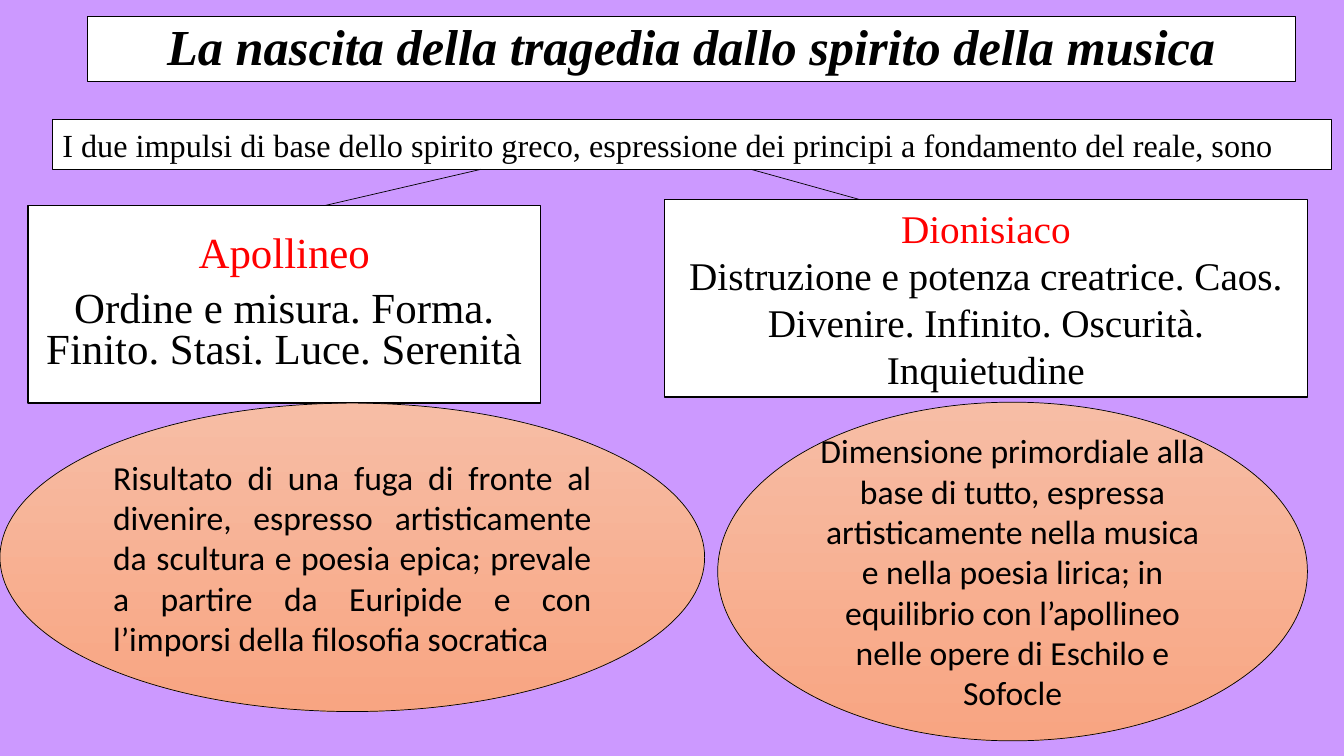
from lxml import etree
from pptx import Presentation
from pptx import util as u
from pptx.dml.color import RGBColor
from pptx.enum import shapes, text
from pptx.oxml.ns import qn

LILAC = RGBColor(0xCC, 0x99, 0xFF)
WHITE = RGBColor(0xFF, 0xFF, 0xFF)
BLACK = RGBColor(0, 0, 0)
RED = RGBColor(0xFF, 0, 0)
PEACH = RGBColor(0xF7, 0xBD, 0xA5)
SALMON = RGBColor(0xF8, 0xA5, 0x82)
CENTER, JUSTIFY = text.PP_ALIGN.CENTER, text.PP_ALIGN.JUSTIFY
SERIF, SANS = "Times New Roman", "Calibri"


class Board:
    """A page divided into 100 columns and 100 rows."""

    def __init__(self, deck):
        self.column = deck.slide_width / 100
        self.row = deck.slide_height / 100
        self.page = deck.slides.add_slide(deck.slide_layouts[6])
        self.page.background.fill.solid()
        self.page.background.fill.fore_color.rgb = LILAC

    def place(self, *cells):
        return [u.Emu(round(cell * (self.row if index % 2 else self.column)))
                for index, cell in enumerate(cells)]

    def shape(self, kind, cells, outline):
        shape = self.page.shapes.add_shape(kind, *self.place(*cells))
        shape.shadow.inherit = False
        shape.line.color.rgb = BLACK
        shape.line.width = u.Pt(outline)
        shape.text_frame.word_wrap = True
        shape.text_frame.vertical_anchor = text.MSO_ANCHOR.MIDDLE
        return shape

    def add_lines(self, shape, lines, size, font=SERIF, align=CENTER,
                  spacing=1.0, before=0, emphasis=False):
        frame = shape.text_frame
        for index, (words, color) in enumerate(lines):
            para = frame.add_paragraph() if index else frame.paragraphs[0]
            para.alignment = align
            para.line_spacing = spacing
            para.space_before = u.Pt(before)
            span = para.add_run()
            span.text = words
            span.font.name = font
            span.font.size = u.Pt(size)
            span.font.bold = span.font.italic = emphasis
            span.font.color.rgb = color

    def box(self, cells, lines, size, outline=0.75, **style):
        box = self.shape(shapes.MSO_SHAPE.RECTANGLE, cells, outline)
        box.fill.solid()
        box.fill.fore_color.rgb = WHITE
        self.add_lines(box, lines, size, **style)
        return box

    def oval(self, cells, words, align):
        oval = self.shape(shapes.MSO_SHAPE.OVAL, cells, 0.5)
        oval.fill.gradient()
        oval.fill.gradient_angle = 270
        for stop, color in zip(oval.fill.gradient_stops, (PEACH, SALMON)):
            stop.color.rgb = color
        self.add_lines(oval, [(words, BLACK)], 24, font=SANS, align=align)

    def branch(self, *ends):
        line = self.page.shapes.add_connector(
            shapes.MSO_CONNECTOR.STRAIGHT, *self.place(*ends))
        line.line.color.rgb = BLACK
        line.line.width = u.Pt(0.5)
        etree.SubElement(line._element.spPr, qn("a:effectLst"))


def main():
    deck = Presentation()
    deck.slide_width, deck.slide_height = u.Inches(13.33), u.Inches(7.5)
    board = Board(deck)

    board.box((6.53, 2.13, 89.85, 8.67),
              [("La nascita della tragedia dallo spirito della musica", BLACK)],
              36, spacing=0.9, emphasis=True)
    board.box((2.1, 27.2, 38.1, 26.13),
              [("Apollineo", RED),
               ("Ordine e misura. Forma. Finito. Stasi. Luce. Serenità", BLACK)],
              30.6, outline=1, spacing=0.8, before=10)
    board.box((49.43, 26.4, 47.85, 26.13),
              [("Dionisiaco", RED),
               ("Distruzione e potenza creatrice. Caos. Divenire. Infinito. "
                "Oscurità. Inquietudine", BLACK)],
              28, outline=1)

    board.oval((0, 53.33, 52.43, 40.8),
               "Risultato di una fuga di fronte al divenire, espresso "
               "artisticamente da scultura e poesia epica; prevale a partire "
               "da Euripide e con l’imporsi della filosofia socratica", JUSTIFY)
    board.oval((53.4, 53.2, 43.88, 44.8),
               "Dimensione primordiale alla base di tutto, espressa "
               "artisticamente nella musica e nella poesia lirica; in "
               "equilibrio con l’apollineo nelle opere di Eschilo e Sofocle",
               CENTER)

    intro = board.box((3.9, 15.87, 95.2, 6.53),
                      [("I due impulsi di base dello spirito greco, espressione "
                        "dei principi a fondamento del reale, sono", BLACK)],
                      23, align=JUSTIFY)
    intro.text_frame.vertical_anchor = text.MSO_ANCHOR.TOP
    intro.text_frame.auto_size = text.MSO_AUTO_SIZE.SHAPE_TO_FIT_TEXT
    board.branch(35.78, 22.4, 24.15, 27.2)
    board.branch(55.88, 22.4, 63.98, 26.4)

    deck.save("out.pptx")


if __name__ == "__main__":
    main()
